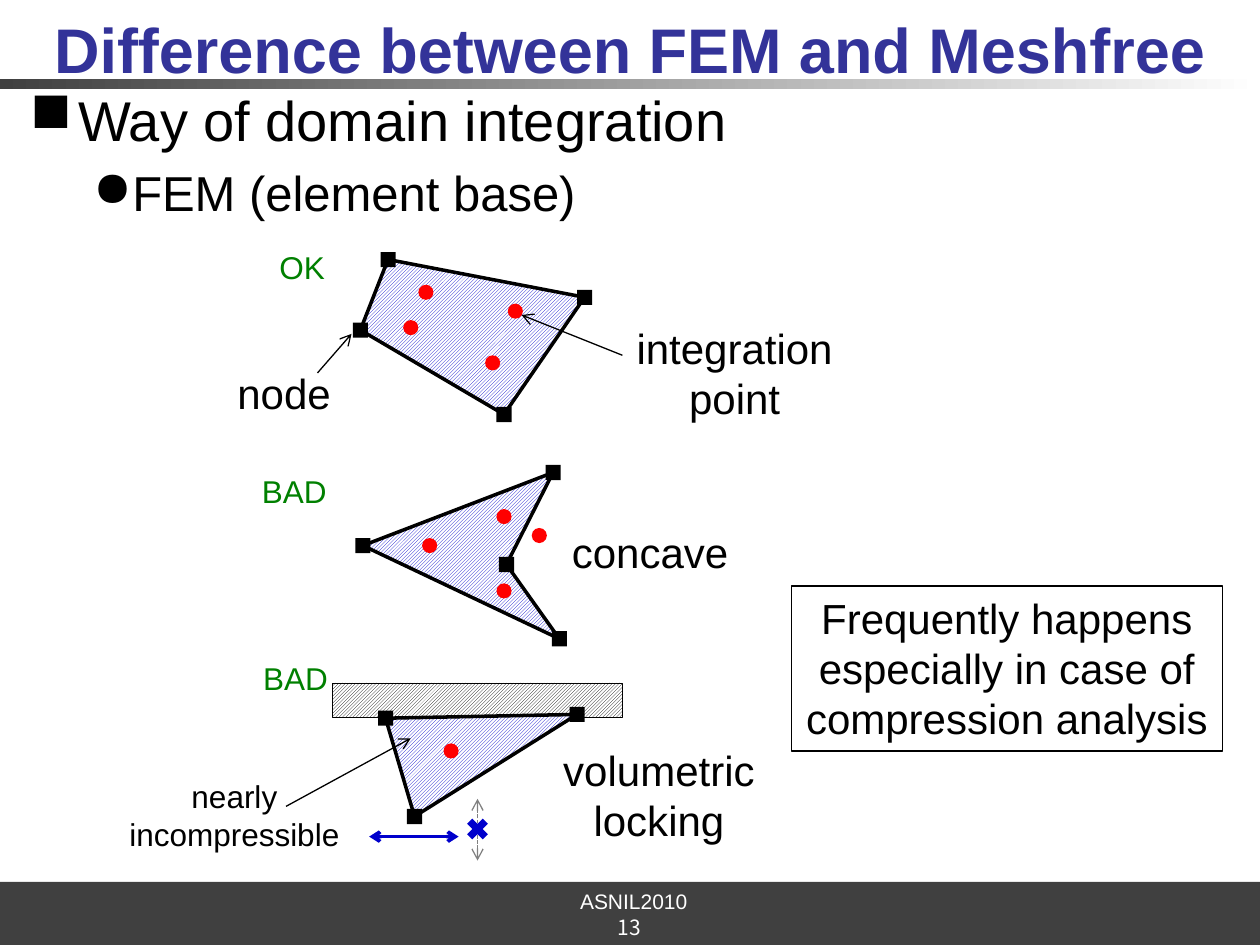
from dataclasses import dataclass

from lxml.etree import SubElement
from pptx import Presentation
from pptx.dml.color import RGBColor
from pptx.enum.dml import MSO_LINE, MSO_PATTERN
from pptx.enum.shapes import MSO_CONNECTOR, MSO_SHAPE
from pptx.enum.text import MSO_ANCHOR, PP_ALIGN
from pptx.oxml.ns import qn
from pptx.util import Inches, Pt

BLACK, WHITE, BLUE, GREEN = "000000", "FFFFFF", "0000CC", "008000"
RED, DARK, GREY, NAVY, TEAL = "FF0000", "404040", "808080", "333399", "B7DEE8"
MARK = 0.12

Point = tuple[float, float]
Box = tuple[float, float, float, float]


@dataclass
class Element:
    nodes: list[Point]
    integration_points: list[Point]


@dataclass
class Label:
    text: str
    box: Box
    size: int = 24
    color: str = BLACK
    align: PP_ALIGN = PP_ALIGN.CENTER


@dataclass
class Arrow:
    start: Point
    end: Point
    color: str = BLACK
    width: float = 0.75
    both_ends: bool = False
    dashed: bool = False


ELEMENTS = [
    Element([(3.08, 2.06), (4.64, 2.36), (4, 3.29), (2.86, 2.62)],
            [(3.38, 2.32), (3.26, 2.6), (4.09, 2.47), (3.91, 2.88)]),
    Element([(4.39, 3.75), (4.02, 4.48), (4.44, 5.07), (2.88, 4.33)],
            [(3.41, 4.33), (4, 4.1), (4.28, 4.25), (4, 4.69)]),
    Element([(4.58, 5.67), (3.29, 6.48), (3.06, 5.7)], [(3.58, 5.96)]),
]
LABELS = [
    Label("integration\vpoint", (4.94, 2.51, 1.78, 0.91)),
    Label("OK", (2.12, 1.92, 0.57, 0.4), 18, GREEN, PP_ALIGN.LEFT),
    Label("BAD", (1.98, 3.7, 0.72, 0.4), 18, GREEN, PP_ALIGN.LEFT),
    Label("BAD", (1.99, 5.18, 0.72, 0.4), 18, GREEN, PP_ALIGN.LEFT),
    Label("concave", (4.44, 4.13, 1.46, 0.5), align=PP_ALIGN.LEFT),
    Label("volumetric\vlocking", (4.36, 5.86, 1.74, 0.91)),
    Label("node", (1.78, 2.87, 0.95, 0.5)),
    Label("nearly\nincompressible", (0.92, 6.12, 1.88, 0.71), 18),
]
ARROWS = [
    Arrow((2.93, 6.64), (3.64, 6.64), BLUE, 2, both_ends=True),
    Arrow((3.79, 6.83), (3.79, 6.34), GREY, both_ends=True, dashed=True),
    Arrow((2.52, 2.96), (2.79, 2.65)),
    Arrow((4.94, 2.82), (4.14, 2.5)),
    Arrow((2.27, 6.4), (3.26, 5.86)),
]


def rgb(color: str) -> RGBColor:
    return RGBColor.from_string(color)


def set_line(shape, color: str | None, width: float = 0.75) -> None:
    if color is None:
        shape.line.fill.background()
        return
    shape.line.color.rgb = rgb(color)
    shape.line.width = Pt(width)


def set_pattern(shape, pattern: MSO_PATTERN, color: str) -> None:
    shape.fill.patterned()
    shape.fill.pattern = pattern
    shape.fill.fore_color.rgb = rgb(color)
    shape.fill.back_color.rgb = rgb(WHITE)


def add_shape(slide, kind: MSO_SHAPE, box: Box, fill: str | None = None,
              line: str | None = None, width: float = 0.75):
    shape = slide.shapes.add_shape(kind, *map(Inches, box))
    shape.shadow.inherit = False
    if fill is None:
        shape.fill.background()
    else:
        shape.fill.solid()
        shape.fill.fore_color.rgb = rgb(fill)
    set_line(shape, line, width)
    return shape


def write(shape, text: str, *, size: float = 24, color: str = BLACK, bold: bool = False,
          font: str = "Arial", align: PP_ALIGN = PP_ALIGN.CENTER, wrap: bool = False,
          anchor: MSO_ANCHOR = MSO_ANCHOR.TOP, inset: bool = True) -> None:
    frame = shape.text_frame
    frame.word_wrap = wrap
    frame.vertical_anchor = anchor
    if not inset:
        frame.margin_left = frame.margin_right = frame.margin_top = frame.margin_bottom = 0
    frame.text = text
    for paragraph in frame.paragraphs:
        paragraph.alignment = align
        for run in paragraph.runs:
            run.font.name = font
            run.font.size = Pt(size)
            run.font.bold = bold
            run.font.color.rgb = rgb(color)


def add_text(slide, text: str, box: Box, **text_format):
    shape = slide.shapes.add_textbox(*map(Inches, box))
    write(shape, text, **text_format)
    return shape


def add_text_shadow(shape, color: str) -> None:
    for run in shape.text_frame.paragraphs[0].runs:
        effects = SubElement(run.font._element, qn("a:effectLst"))
        run.font._element.find(qn("a:solidFill")).addnext(effects)
        shadow = SubElement(effects, qn("a:outerShdw"), dist="38100", dir="2700000")
        SubElement(shadow, qn("a:srgbClr"), val=color)


def set_bullet(paragraph, character: str, left: float, hanging: float) -> None:
    properties = paragraph._p.get_or_add_pPr()
    properties.set("marL", str(Inches(left)))
    properties.set("indent", str(-Inches(hanging)))
    SubElement(properties, qn("a:buChar"), char=character)


def add_mark(slide, kind: MSO_SHAPE, center: Point, color: str, size: float = MARK) -> None:
    x, y = center
    add_shape(slide, kind, (x - size / 2, y - size / 2, size, size), color)


def add_element(slide, element: Element) -> None:
    corners = [(Inches(x), Inches(y)) for x, y in element.nodes]
    builder = slide.shapes.build_freeform(*corners[0])
    builder.add_line_segments(corners[1:], close=True)
    outline = builder.convert_to_shape()
    outline.shadow.inherit = False
    set_pattern(outline, MSO_PATTERN.LIGHT_UPWARD_DIAGONAL, BLUE)
    set_line(outline, BLACK, 2)
    for point in element.integration_points:
        add_mark(slide, MSO_SHAPE.OVAL, point, RED)
    for node in element.nodes:
        add_mark(slide, MSO_SHAPE.RECTANGLE, node, BLACK)


def add_arrow(slide, arrow: Arrow) -> None:
    connector = slide.shapes.add_connector(
        MSO_CONNECTOR.STRAIGHT, *map(Inches, arrow.start + arrow.end))
    set_line(connector, arrow.color, arrow.width)
    if arrow.dashed:
        connector.line.dash_style = MSO_LINE.SQUARE_DOT
    line = connector.line._get_or_add_ln()
    for end in ("a:headEnd", "a:tailEnd") if arrow.both_ends else ("a:tailEnd",):
        SubElement(line, qn(end), type="arrow")
    SubElement(connector._element.spPr, qn("a:effectLst"))


def add_frame(slide) -> None:
    rule = add_shape(slide, MSO_SHAPE.RECTANGLE, (0, 0.63, 10, 0.08), DARK)
    rule.fill.gradient()
    rule.fill.gradient_angle = 0
    for stop, color in zip(rule.fill.gradient_stops, (DARK, WHITE)):
        stop.color.rgb = rgb(color)
    add_shape(slide, MSO_SHAPE.RECTANGLE, (0, 7, 10, 0.5), DARK)
    add_text(slide, "ASNIL2010", (4.6, 7.05, 0.86, 0.19), size=12, color=WHITE, inset=False)
    add_text(slide, "13", (4.42, 7.25, 1.15, 0.22), size=12, color=WHITE,
             font="Noto Sans CJK JP", wrap=True, anchor=MSO_ANCHOR.MIDDLE)
    title = add_text(slide, "Difference between FEM and Meshfree", (0, 0.04, 10, 0.68), size=36,
                     color=NAVY, bold=True, wrap=True, anchor=MSO_ANCHOR.MIDDLE, inset=False)
    add_text_shadow(title, TEAL)


def add_body(slide) -> None:
    body = add_text(slide, "Way of domain integration\nFEM (element base)",
                    (0.24, 0.68, 9.76, 6.3), size=32, align=PP_ALIGN.LEFT, wrap=True, inset=False)
    topic, method = body.text_frame.paragraphs
    method.level = 1
    method.space_before = Pt(5.6)
    method.runs[0].font.size = Pt(28)
    set_bullet(topic, "■", 0.38, 0.38)
    set_bullet(method, "●", 0.81, 0.31)


def main() -> None:
    presentation = Presentation()
    presentation.slide_width, presentation.slide_height = Inches(10), Inches(7.5)
    slide = presentation.slides.add_slide(presentation.slide_layouts[6])
    add_frame(slide)
    add_body(slide)
    wall = add_shape(slide, MSO_SHAPE.RECTANGLE, (2.64, 5.42, 2.3, 0.27), WHITE, BLACK, 0.25)
    set_pattern(wall, MSO_PATTERN.DARK_UPWARD_DIAGONAL, BLACK)
    for element in ELEMENTS:
        add_element(slide, element)
    for label in LABELS:
        add_text(slide, label.text, label.box, size=label.size, color=label.color,
                 align=label.align)
    for arrow in ARROWS:
        add_arrow(slide, arrow)
    add_mark(slide, MSO_SHAPE.MATH_MULTIPLY, (3.79, 6.58), BLUE, 0.24)
    remark = add_shape(slide, MSO_SHAPE.RECTANGLE, (6.28, 4.65, 3.42, 1.31), line=BLACK)
    write(remark, "Frequently happens\nespecially in case of\ncompression analysis")
    presentation.save("out.pptx")


if __name__ == "__main__":
    main()
